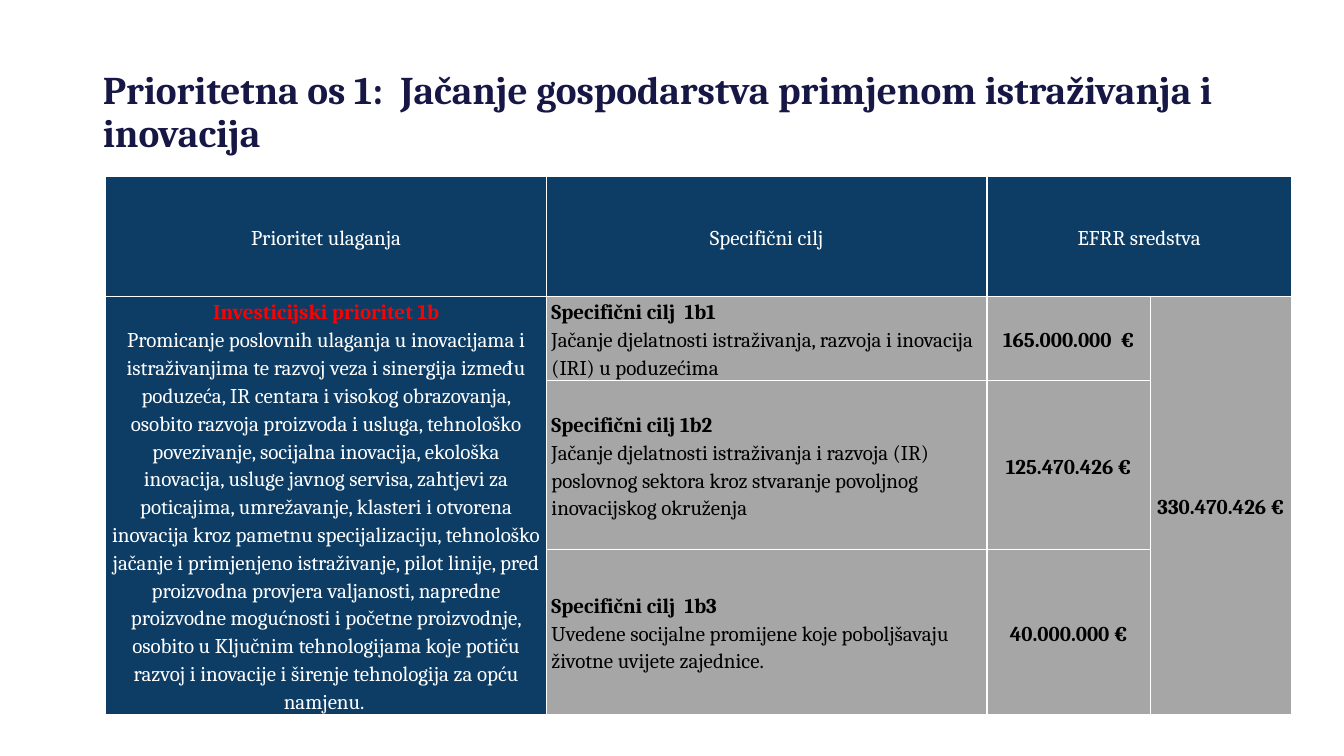
from dataclasses import dataclass
from typing import Optional

from lxml.etree import SubElement
from pptx import Presentation
from pptx.dml.color import RGBColor
from pptx.enum.text import MSO_ANCHOR as Anchor, MSO_AUTO_SIZE as AutoSize, PP_ALIGN as Align
from pptx.oxml.ns import qn
from pptx.util import Inches, Pt

FONT = "Cambria"
COLORS = {
    "title": "171745",
    "navy": "0D3D65",
    "gray": "A6A6A6",
    "white": "FFFFFF",
    "red": "FF0000",
    "black": "000000",
}
COLUMN_WIDTHS = (4.37, 4.37, 1.62, 1.4)
ROW_HEIGHTS = (1.19, 0.79, 1.67, 1.27)


@dataclass(frozen=True)
class Entry:
    """Content of one table cell, with an optional bold heading above the text."""
    row: int
    column: int
    text: str
    heading: str = ""
    fill: str = "gray"
    color: str = "black"
    heading_color: str = "black"
    bold: bool = False
    align: Align = Align.CENTER
    merge_to: Optional[tuple[int, int]] = None


@dataclass(frozen=True)
class Goal:
    heading: str
    text: str
    funds: str


GOALS = (
    Goal("Specifični cilj  1b1",
         "Jačanje djelatnosti istraživanja, razvoja i inovacija (IRI) u poduzećima",
         "165.000.000  €"),
    Goal("Specifični cilj 1b2",
         "Jačanje djelatnosti istraživanja i razvoja (IR) poslovnog sektora kroz "
         "stvaranje povoljnog inovacijskog okruženja",
         "125.470.426 €"),
    Goal("Specifični cilj  1b3",
         "Uvedene socijalne promijene koje poboljšavaju životne uvijete zajednice.",
         "40.000.000 €"),
)
PRIORITY = (
    "Promicanje poslovnih ulaganja u inovacijama i istraživanjima te razvoj veza i "
    "sinergija između poduzeća, IR centara i visokog obrazovanja, osobito razvoja "
    "proizvoda i usluga, tehnološko povezivanje, socijalna inovacija, ekološka "
    "inovacija, usluge javnog servisa, zahtjevi za poticajima, umrežavanje, klasteri i "
    "otvorena inovacija kroz pametnu specijalizaciju, tehnološko jačanje i primjenjeno "
    "istraživanje, pilot linije, pred proizvodna provjera valjanosti, napredne "
    "proizvodne mogućnosti i početne proizvodnje, osobito u Ključnim tehnologijama koje "
    "potiču razvoj i inovacije i širenje tehnologija za opću namjenu. "
)
ENTRIES = [
    Entry(0, 0, "Prioritet ulaganja", fill="navy", color="white"),
    Entry(0, 1, "Specifični cilj", fill="navy", color="white"),
    Entry(0, 2, "EFRR sredstva", fill="navy", color="white", merge_to=(0, 3)),
    Entry(1, 0, PRIORITY, "Investicijski prioritet 1b", fill="navy", color="white",
          heading_color="red", merge_to=(3, 0)),
    Entry(1, 3, "330.470.426 €", bold=True, merge_to=(3, 3)),
]
for goal_row, goal in enumerate(GOALS, start=1):
    ENTRIES += [
        Entry(goal_row, 1, goal.text, goal.heading, align=Align.LEFT),
        Entry(goal_row, 2, goal.funds, bold=True),
    ]


def rgb(name: str) -> RGBColor:
    return RGBColor.from_string(COLORS[name])


def write(paragraph, text: str, *, size: float = 15, color: str = "black",
          bold: bool = False, align: Align = Align.LEFT, spacing: float = 1.15) -> None:
    paragraph.alignment = align
    paragraph.line_spacing = spacing
    paragraph.space_before = paragraph.space_after = Pt(0)
    run = paragraph.add_run()
    run.text = text
    run.font.name = FONT
    run.font.size = Pt(size)
    run.font.bold = bold
    run.font.color.rgb = rgb(color)


def add_borders(cell) -> None:
    """Put thin white lines on all four sides, ahead of the fill as the schema asks."""
    properties = cell._tc.get_or_add_tcPr()
    for index, side in enumerate(("lnL", "lnR", "lnT", "lnB")):
        line = SubElement(properties, qn(f"a:{side}"), w=str(Pt(1)))
        properties.insert(index, line)
        solid = SubElement(line, qn("a:solidFill"))
        SubElement(solid, qn("a:srgbClr"), val=COLORS["white"])


def fill_cell(table, entry: Entry) -> None:
    cell = table.cell(entry.row, entry.column)
    if entry.merge_to:
        cell.merge(table.cell(*entry.merge_to))
    cell.vertical_anchor = Anchor.MIDDLE
    cell.margin_left = cell.margin_right = Inches(0.05)
    cell.margin_top, cell.margin_bottom = Inches(0.01), Inches(0)
    frame = cell.text_frame
    paragraph = frame.paragraphs[0]
    if entry.heading:
        write(paragraph, entry.heading, color=entry.heading_color, bold=True,
              align=entry.align)
        paragraph = frame.add_paragraph()
    write(paragraph, entry.text, color=entry.color, bold=entry.bold, align=entry.align)

    last_row, last_column = entry.merge_to or (entry.row, entry.column)
    for row in range(entry.row, last_row + 1):
        for column in range(entry.column, last_column + 1):
            part = table.cell(row, column)
            part.fill.solid()
            part.fill.fore_color.rgb = rgb(entry.fill)
            add_borders(part)


def add_title(slide) -> None:
    title = slide.shapes.title
    title.left, title.top = Inches(0.92), Inches(0.4)
    title.width, title.height = Inches(11.5), Inches(1.45)
    frame = title.text_frame
    frame.word_wrap = True
    frame.auto_size = AutoSize.NONE
    frame.vertical_anchor = Anchor.MIDDLE
    write(frame.paragraphs[0],
          "Prioritetna os 1:  Jačanje gospodarstva primjenom istraživanja i inovacija",
          size=28, color="title", bold=True, spacing=0.9)


def add_funding_table(slide) -> None:
    table = slide.shapes.add_table(
        len(ROW_HEIGHTS), len(COLUMN_WIDTHS), Inches(1.05), Inches(1.75),
        Inches(sum(COLUMN_WIDTHS)), Inches(sum(ROW_HEIGHTS))).table
    for column, width in zip(table.columns, COLUMN_WIDTHS):
        column.width = Inches(width)
    for row, height in zip(table.rows, ROW_HEIGHTS):
        row.height = Inches(height)
    for entry in ENTRIES:
        fill_cell(table, entry)


def main() -> None:
    presentation = Presentation()
    presentation.slide_width, presentation.slide_height = Inches(13.33), Inches(7.5)
    slide = presentation.slides.add_slide(presentation.slide_layouts.get_by_name("Title Only"))
    add_title(slide)
    add_funding_table(slide)
    presentation.save("out.pptx")


if __name__ == "__main__":
    main()
